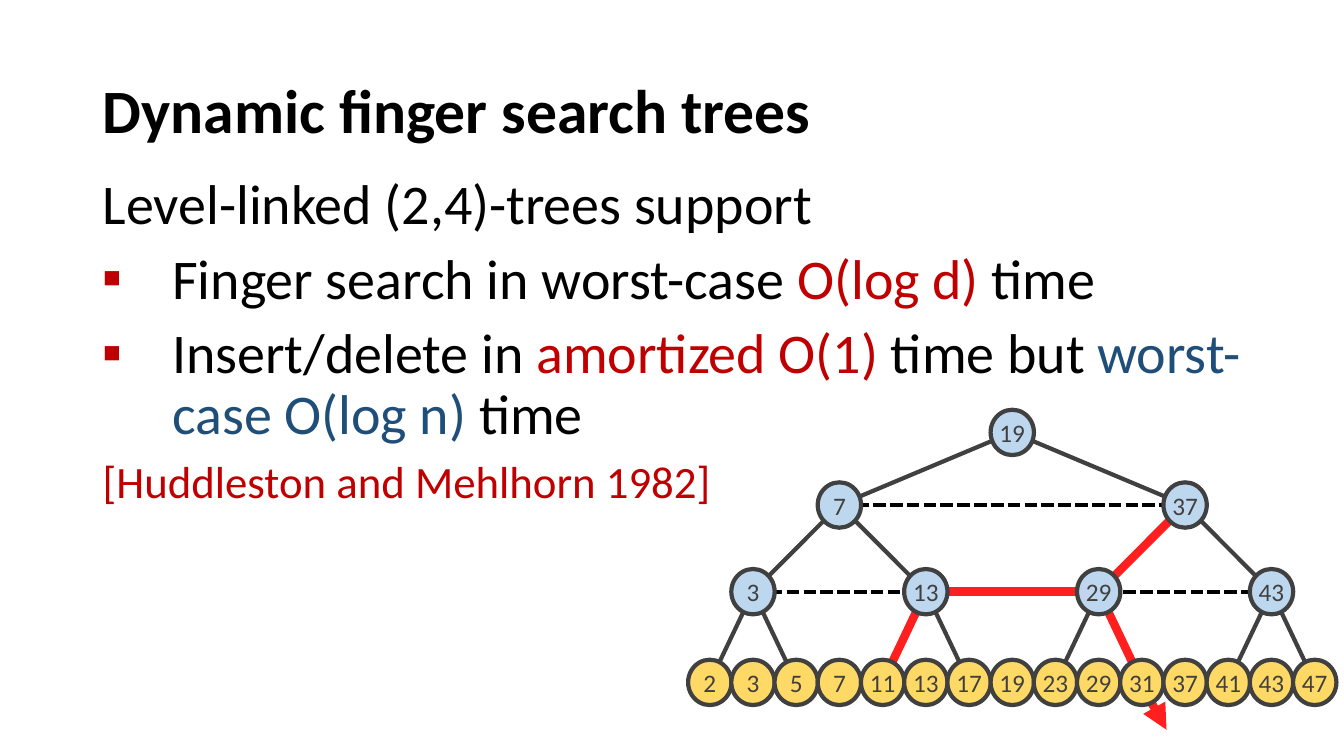
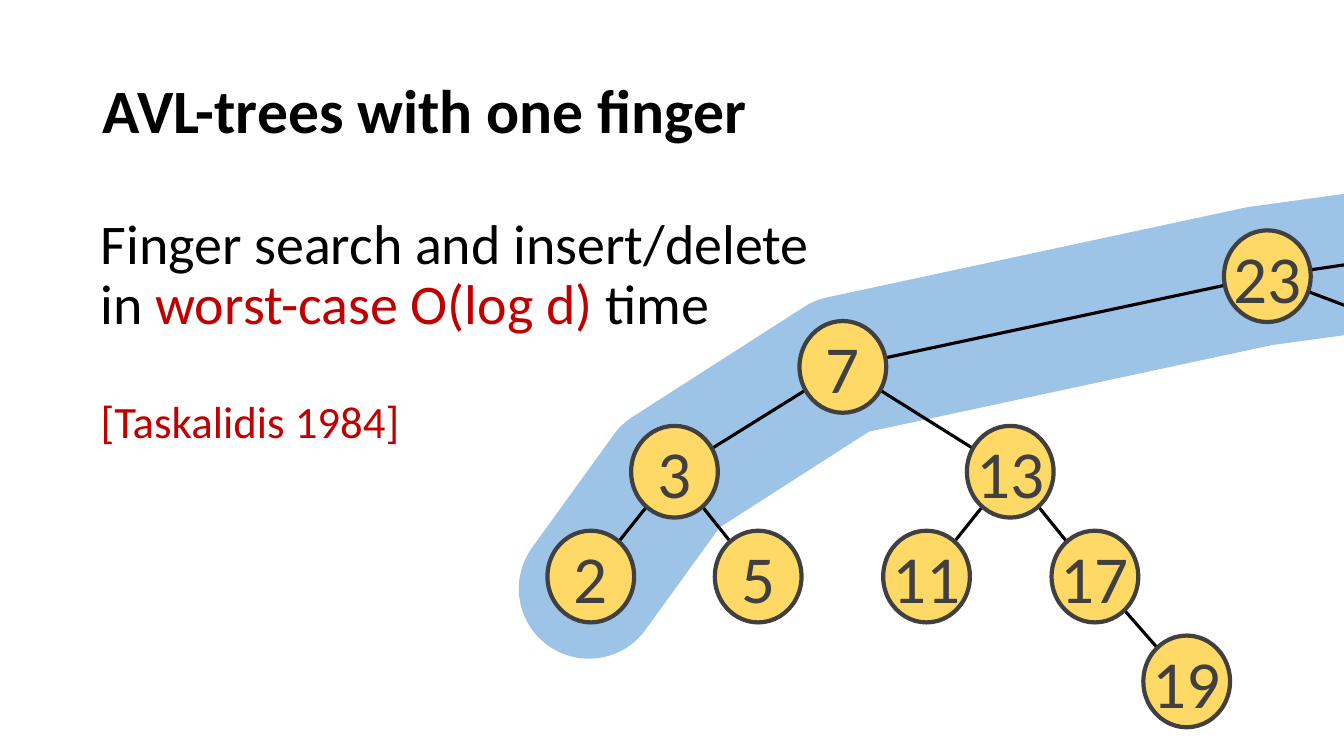
"""Build two slides on finger search trees."""
from lxml.etree import SubElement
from pptx import Presentation
from pptx.dml.color import RGBColor
from pptx.enum.dml import MSO_LINE
from pptx.enum.shapes import MSO_CONNECTOR, MSO_SHAPE
from pptx.enum.text import MSO_ANCHOR, PP_ALIGN
from pptx.oxml.ns import qn
from pptx.util import Inches, Pt

BLACK, GREY, RED, NAVY = "000000", "404040", "C00000", "1F4E79"
PATH_RED, YELLOW, BLUE, BAND = "FF1F1F", "FFD966", "BDD7EE", "9DC3E6"
rgb = RGBColor.from_string


def add_line(s, a, b, color, width):
    sp = s.shapes.add_connector(MSO_CONNECTOR.STRAIGHT, *map(Inches, a + b))
    SubElement(sp._element.spPr, qn("a:effectLst"))
    sp.line.color.rgb = rgb(color)
    sp.line.width = Pt(width)
    return sp


def add_node(s, center, size, label, fill, points):
    (x, y), (w, h) = center, size
    sp = s.shapes.add_shape(MSO_SHAPE.OVAL, *map(Inches, (x - w / 2, y - h / 2, w, h)))
    sp.shadow.inherit = False
    sp.fill.solid()
    sp.fill.fore_color.rgb = rgb(fill)
    sp.line.color.rgb = rgb(GREY)
    sp.line.width = Pt(3)
    tf = sp.text_frame
    frame = dict(word_wrap=False, vertical_anchor=MSO_ANCHOR.MIDDLE,
                 margin_left=0, margin_right=0, margin_top=0, margin_bottom=0)
    for name, value in frame.items():
        setattr(tf, name, value)
    p = tf.paragraphs[0]
    p.alignment = PP_ALIGN.CENTER
    r = p.add_run()
    r.text = str(label)
    r.font.name, r.font.size = "Calibri", Pt(points)
    r.font.color.rgb = rgb(GREY)


prs = Presentation()
prs.slide_width, prs.slide_height = Inches(13.33), Inches(7.5)
layout = prs.slide_layouts[5]

pages = [
    ("Dynamic finger search trees", (0.92, 1.7, 11.5, 3.87), [
        (40, 10, False, [("Level-linked (2,4)-trees support", BLACK)]),
        (40, 10, True, [("Finger search in worst-case ", BLACK), ("O(log d)", RED), (" time", BLACK)]),
        (40, 10, True, [("Insert/delete in ", BLACK), ("amortized O(1) ", RED), ("time but ", BLACK),
                        ("worst-case O(log n) ", NAVY), ("time", BLACK)]),
        (32, 10, False, [("[Huddleston and Mehlhorn 1982]", RED)]),
    ]),
    ("AVL-trees with one finger", (0.9, 2.09, 7.37, 2.62), [
        (40, 10, False, [("Finger search and insert/delete in ", BLACK),
                         ("worst-case O(log d)", RED), (" time", BLACK)]),
        (32, 45, False, [("[Taskalidis 1984]", RED)]),
    ]),
]

for title, box, paragraphs in pages:
    s = prs.slides.add_slide(layout)
    sp = s.shapes.title
    place = dict(left=0.92, top=0.4, width=11.5, height=1.45)
    for name, value in place.items():
        setattr(sp, name, Inches(value))
    tf = sp.text_frame
    tf.text = title
    tf.vertical_anchor = MSO_ANCHOR.MIDDLE
    p = tf.paragraphs[0]
    p.alignment, p.line_spacing = PP_ALIGN.LEFT, 0.9
    font = p.runs[0].font
    for name, value in dict(name="Calibri", size=Pt(44), bold=True).items():
        setattr(font, name, value)
    font.color.rgb = rgb(BLACK)

    tf = s.shapes.add_textbox(*map(Inches, box)).text_frame
    tf.word_wrap = True
    for i, (points, before, bullet, runs) in enumerate(paragraphs):
        p = tf.add_paragraph() if i else tf.paragraphs[0]
        p.line_spacing, p.space_before = 0.9, Pt(before)
        if bullet:
            pPr = p._p.get_or_add_pPr()
            pPr.set("marL", str(Inches(0.69)))
            pPr.set("indent", str(Inches(-0.69)))
            SubElement(SubElement(pPr, qn("a:buClr")), qn("a:srgbClr"), val=RED)
            SubElement(pPr, qn("a:buFont"), typeface="Calibri")
            SubElement(pPr, qn("a:buChar"), char="▪")
        for text, color in runs:
            r = p.add_run()
            r.text = text
            r.font.name, r.font.size = "Calibri", Pt(points)
            r.font.color.rgb = rgb(color)

linked, avl = prs.slides

keys = [2, 3, 5, 7, 11, 13, 17, 19, 23, 29, 31, 37, 41, 43, 47]
xs = [7.04 + 6 / 14 * i for i in range(len(keys))]
row_y = {4: 4.29, 2: 5.01, 1: 5.87, 0: 6.77}
rows = {half: range(2 * half - 1, len(keys), 4 * half) for half in (4, 2, 1)}

for half in (2, 1):
    y = row_y[half]
    sp = add_line(linked, (xs[rows[half][0]], y), (xs[rows[half][-1]], y), BLACK, 3)
    sp.line.dash_style = MSO_LINE.SQUARE_DOT
for half, parents in rows.items():
    for i in parents:
        for child in (i - half, i + half):
            add_line(linked, (xs[i], row_y[half]), (xs[child], row_y[half // 2]), GREY, 3)

finger_path = [(xs[11], row_y[2]), (xs[9], row_y[1]), (xs[5], row_y[1]), (xs[4], row_y[0])]
for a, b in zip(finger_path, finger_path[1:]):
    add_line(linked, a, b, PATH_RED, 6)
add_line(linked, (xs[9], row_y[1]), (xs[10], row_y[0]), PATH_RED, 6)
sp = add_line(linked, (11.37, 6.88), (11.57, 7.24), PATH_RED, 6)
SubElement(sp.line._get_or_add_ln(), qn("a:tailEnd"), type="triangle")

for half, indexes in {**rows, 0: range(len(keys))}.items():
    for i in indexes:
        add_node(linked, (xs[i], row_y[half]), (0.43, 0.45), keys[i], BLUE if half else YELLOW, 18)

band = [(5.84, 5.84), (6.65, 4.72), (8.35, 3.63), (12.49, 2.74), (13.95, 2.54)]
points = [(Inches(x), Inches(y)) for x, y in band]
builder = avl.shapes.build_freeform(*points[0])
builder.add_line_segments(points[1:], close=False)
sp = builder.convert_to_shape()
sp.shadow.inherit = False
sp.fill.background()
sp.line.color.rgb = rgb(BAND)
sp.line.width = Pt(100)
ln = sp.line._get_or_add_ln()
ln.set("cap", "rnd")
SubElement(ln, qn("a:round"))

centers = {
    2: (5.86, 5.72), 5: (7.52, 5.72), 11: (9.19, 5.72), 17: (10.86, 5.72), 23: (12.57, 2.74),
    7: (8.36, 3.64), 3: (6.69, 4.68), 13: (10.02, 4.68), 19: (11.77, 6.76),
}
for parent, child in [(23, 7), (7, 3), (7, 13), (3, 2), (3, 5), (13, 11), (13, 17), (17, 19)]:
    add_line(avl, centers[parent], centers[child], BLACK, 2.25)
for end in [(14.07, 2.52), (13.76, 3.19)]:
    add_line(avl, centers[23], end, BLACK, 2.25)
for key, center in centers.items():
    add_node(avl, center, (0.86, 0.91), key, YELLOW, 48)

prs.save("out.pptx")
